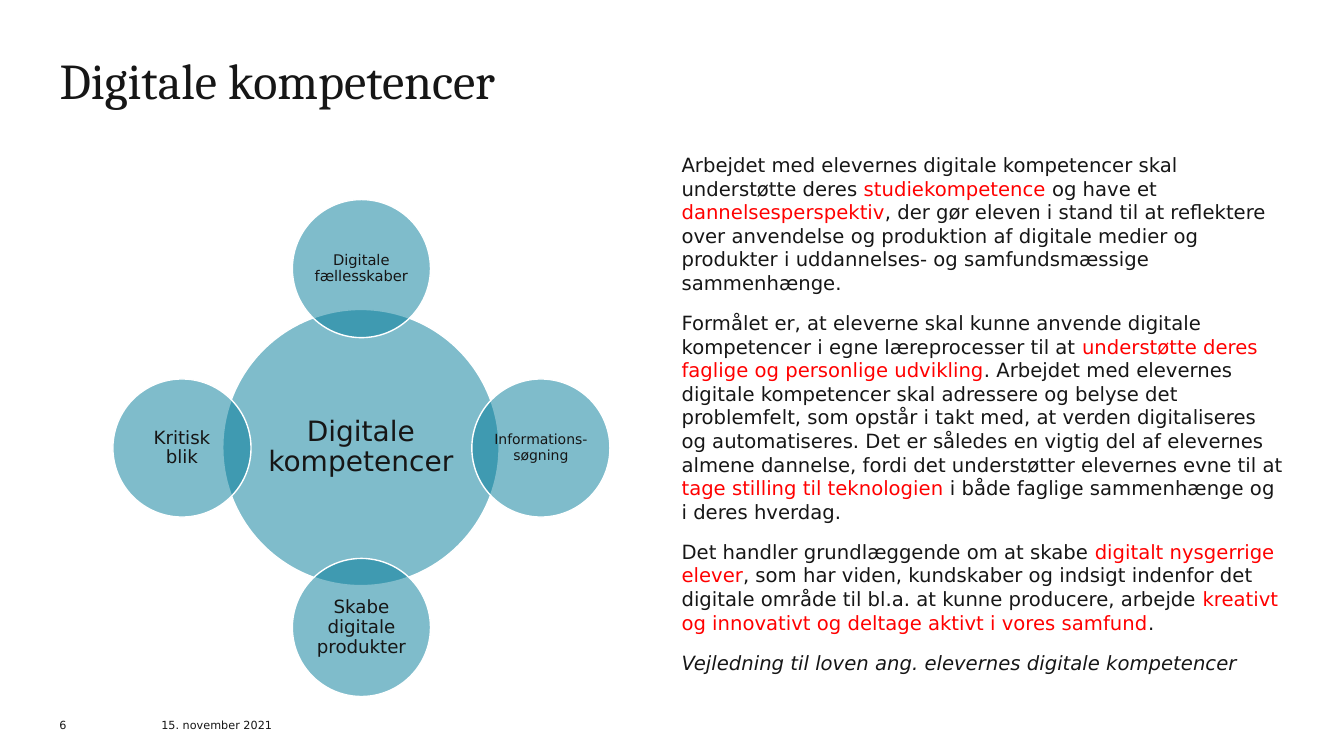
from dataclasses import dataclass

import pptx
import pptx.dml.color
import pptx.enum.shapes
import pptx.enum.text
import pptx.oxml
import pptx.oxml.ns
import pptx.util
from pptx.enum.text import MSO_ANCHOR, PP_ALIGN

EMU_PER_PX = 9144  # 100 px to the inch


@dataclass(frozen=True)
class Theme:
    ink: str = "161616"
    accent: str = "FF0000"
    circle: str = "007A98"
    outline: str = "FFFFFF"
    circle_alpha: int = 50000
    heading_font: str = "Cambria"
    text_font: str = "DejaVu Sans"
    title_size: float = 35.8
    hub_size: float = 20
    large_size: float = 13
    medium_size: float = 10.5
    small_size: float = 10
    body_size: float = 14
    footer_size: float = 8


@dataclass(frozen=True)
class Circle:
    label: str
    across: int  # steps from the hub, in orbits
    down: int
    diameter: int
    size: float
    inset: int


@dataclass(frozen=True)
class FooterItem:
    text: str
    left: int
    width: int


THEME = Theme()
HUB_X, HUB_Y, ORBIT = 358, 444, 178
FOOTER_TOP, FOOTER_HEIGHT = 706, 20

CIRCLES = [
    Circle("Digitale kompetencer", 0, 0, 274, THEME.hub_size, 3),
    Circle("Digitale fællesskaber", 0, -1, 137, THEME.medium_size, 2),
    Circle("Informations-søgning", 1, 0, 137, THEME.small_size, 1),
    Circle("Skabe digitale produkter", 0, 1, 137, THEME.large_size, 2),
    Circle("Kritisk blik", -1, 0, 137, THEME.large_size, 2),
]

FOOTER = [
    FooterItem("15. november 2021", 160, 139),
    FooterItem("6", 59, 30),
]

# Every second part of a paragraph is highlighted.
PURPOSE = [
    (
        "Arbejdet med elevernes digitale kompetencer skal understøtte deres ",
        "studiekompetence",
        " og have et ",
        "dannelsesperspektiv",
        ", der gør eleven i stand til at reflektere over anvendelse og produktion af "
        "digitale medier og produkter i uddannelses- og samfundsmæssige sammenhænge.",
    ),
    (
        "Formålet er, at eleverne skal kunne anvende digitale kompetencer i egne "
        "læreprocesser til at ",
        "understøtte deres faglige og personlige udvikling",
        ". Arbejdet med elevernes digitale kompetencer skal adressere og belyse det "
        "problemfelt, som opstår i takt med, at verden digitaliseres og automatiseres. "
        "Det er således en vigtig del af elevernes almene dannelse, fordi det "
        "understøtter elevernes evne til at ",
        "tage stilling til teknologien",
        " i både faglige sammenhænge og i deres hverdag.",
    ),
    (
        "Det handler grundlæggende om at skabe ",
        "digitalt nysgerrige elever",
        ", som har viden, kundskaber og indsigt indenfor det digitale område til bl.a. "
        "at kunne producere, arbejde ",
        "kreativt og innovativt og deltage aktivt i vores samfund",
        ".",
    ),
]
REFERENCE = "Vejledning til loven ang. elevernes digitale kompetencer"


def px(length: int) -> pptx.util.Emu:
    return pptx.util.Emu(length * EMU_PER_PX)


def rgb(colour: str) -> pptx.dml.color.RGBColor:
    return pptx.dml.color.RGBColor.from_string(colour)


def place(shape, left: int, top: int, width: int, height: int) -> None:
    shape.left, shape.top = px(left), px(top)
    shape.width, shape.height = px(width), px(height)


def prepare(frame, anchor: MSO_ANCHOR, inset: int = 0) -> None:
    """Set wrapping, fixed size, anchor and equal margins."""
    frame.word_wrap = True
    frame.auto_size = pptx.enum.text.MSO_AUTO_SIZE.NONE
    frame.vertical_anchor = anchor
    frame.margin_left = frame.margin_right = px(inset)
    frame.margin_top = frame.margin_bottom = px(inset)


def write(paragraph, *parts: str, size: float, font: str = THEME.text_font,
          align: PP_ALIGN = PP_ALIGN.LEFT, spacing: float = 1.0,
          before: float = 0, italic: bool = False, bulleted: bool = True) -> None:
    """Fill a paragraph; every second part takes the accent colour."""
    paragraph.alignment = align
    paragraph.line_spacing = spacing
    paragraph.space_before = pptx.util.Pt(before)
    if not bulleted:
        properties = paragraph._p.get_or_add_pPr()
        properties.set("marL", "0")
        properties.set("indent", "0")
        properties.append(pptx.oxml.parse_xml(
            f'<a:buNone {pptx.oxml.ns.nsdecls("a")}/>'))
    for index, part in enumerate(parts):
        run = paragraph.add_run()
        run.text = part
        run.font.size = pptx.util.Pt(size)
        run.font.name = font
        run.font.italic = italic
        run.font.color.rgb = rgb(THEME.accent if index % 2 else THEME.ink)


def draw_circle(slide, circle: Circle) -> None:
    radius = circle.diameter // 2
    ellipse = slide.shapes.add_shape(
        pptx.enum.shapes.MSO_SHAPE.OVAL,
        px(HUB_X + circle.across * ORBIT - radius),
        px(HUB_Y + circle.down * ORBIT - radius),
        px(circle.diameter), px(circle.diameter))
    ellipse.shadow.inherit = False
    ellipse.fill.solid()
    ellipse.fill.fore_color.rgb = rgb(THEME.circle)
    fill_colour = ellipse._element.spPr.xpath("a:solidFill/a:srgbClr")[0]
    fill_colour.append(pptx.oxml.parse_xml(
        f'<a:alpha {pptx.oxml.ns.nsdecls("a")} val="{THEME.circle_alpha}"/>'))
    ellipse.line.color.rgb = rgb(THEME.outline)
    ellipse.line.width = pptx.util.Pt(1)
    prepare(ellipse.text_frame, MSO_ANCHOR.MIDDLE, circle.inset)
    write(ellipse.text_frame.paragraphs[0], circle.label, size=circle.size,
          align=PP_ALIGN.CENTER, spacing=0.9)


def draw_footer_item(slide, item: FooterItem) -> None:
    box = slide.shapes.add_textbox(
        px(item.left), px(FOOTER_TOP), px(item.width), px(FOOTER_HEIGHT))
    prepare(box.text_frame, MSO_ANCHOR.BOTTOM)
    write(box.text_frame.paragraphs[0], item.text, size=THEME.footer_size)


def main() -> None:
    deck = pptx.Presentation()
    deck.slide_width, deck.slide_height = px(1333), px(750)
    slide = deck.slides.add_slide(deck.slide_layouts[1])

    heading = slide.shapes.title
    place(heading, 59, 59, 1013, 102)
    prepare(heading.text_frame, MSO_ANCHOR.TOP)
    write(heading.text_frame.paragraphs[0], "Digitale kompetencer",
          size=THEME.title_size, font=THEME.heading_font, spacing=0.83)

    for circle in CIRCLES:
        draw_circle(slide, circle)
    for item in FOOTER:
        draw_footer_item(slide, item)

    purpose = slide.placeholders[1]
    place(purpose, 676, 152, 597, 539)
    frame = purpose.text_frame
    prepare(frame, MSO_ANCHOR.TOP)
    for index, parts in enumerate(PURPOSE):
        paragraph = frame.add_paragraph() if index else frame.paragraphs[0]
        write(paragraph, *parts, size=THEME.body_size,
              before=12 if index else 0, bulleted=False)
    write(frame.add_paragraph(), REFERENCE, size=THEME.body_size,
          before=12, italic=True, bulleted=False)

    deck.save("out.pptx")


if __name__ == "__main__":
    main()
